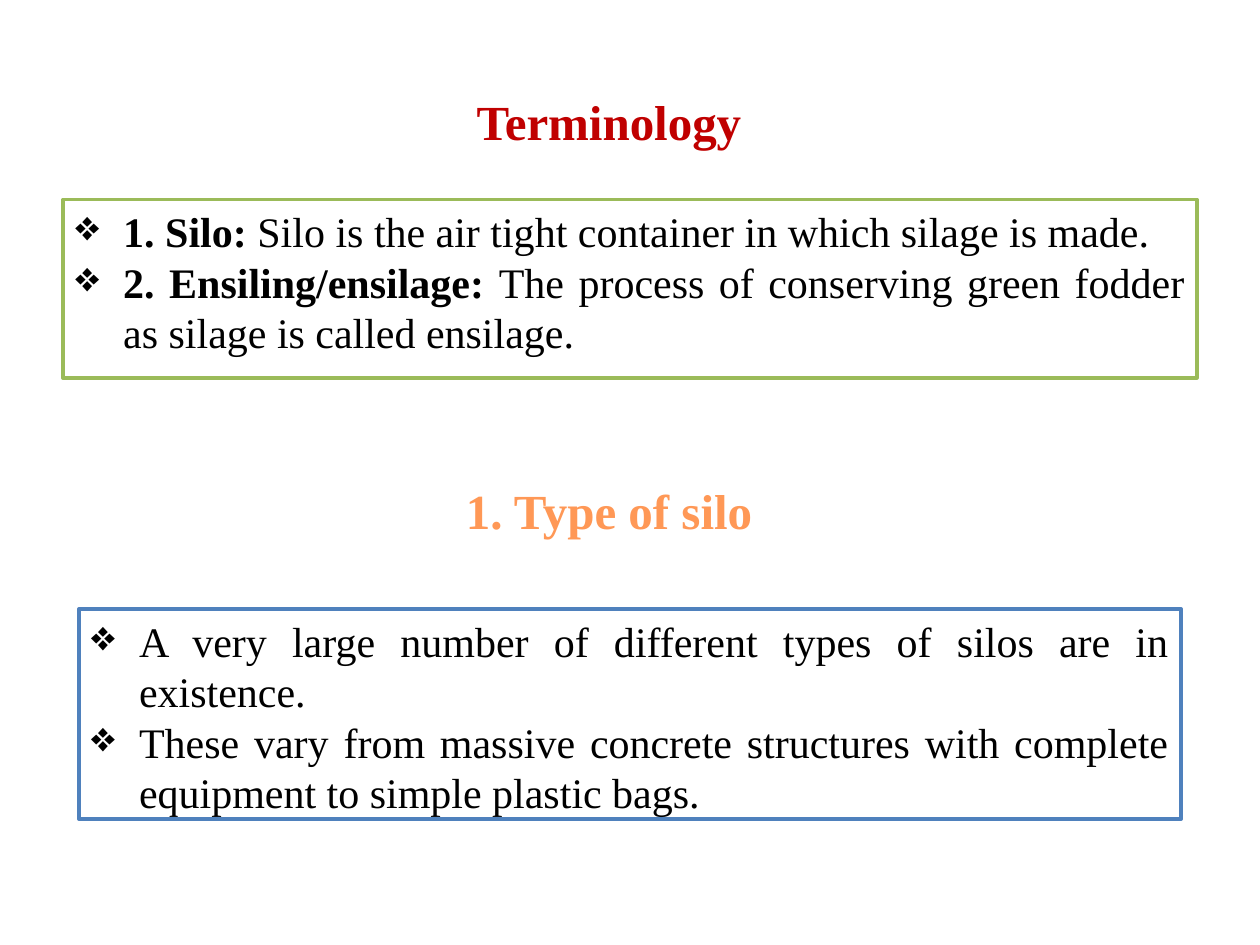
from dataclasses import dataclass

from lxml.etree import SubElement
from pptx import Presentation
from pptx.dml.color import RGBColor
from pptx.enum.shapes import MSO_SHAPE as Shape
from pptx.enum.text import MSO_ANCHOR as Anchor, PP_ALIGN as Align
from pptx.oxml.ns import qn
from pptx.util import Inches, Pt

RED = RGBColor(0xC0, 0x00, 0x00)
ORANGE = RGBColor(0xFF, 0x98, 0x56)
GREEN = RGBColor(0x9B, 0xBB, 0x59)
BLUE = RGBColor(0x4F, 0x81, 0xBD)
BLACK = RGBColor(0, 0, 0)
WHITE = RGBColor(255, 255, 255)
FONT = "Times New Roman"
COLS, ROWS = 120, 90
WIDE, HIGH = Inches(10), Inches(7.5)
HANG = Inches(0.38)


@dataclass
class Area:
    """A place on the grid, in columns and rows."""
    col: float
    row: float
    cols: float
    rows: float

    def box(self) -> tuple:
        return (int(WIDE * self.col / COLS), int(HIGH * self.row / ROWS),
                int(WIDE * self.cols / COLS), int(HIGH * self.rows / ROWS))


@dataclass
class Head:
    area: Area
    text: str
    color: RGBColor
    wrap: bool = True


@dataclass
class Panel:
    """A framed list; each item is a bold term and its plain text."""
    area: Area
    line: RGBColor
    items: list


HEADS = [
    Head(Area(4, 4, 108, 15), "Terminology", RED),
    Head(Area(43, 45.1, 30, 6.9), "1. Type of silo", ORANGE, wrap=False),
]
PANELS = [
    Panel(Area(6, 19, 108, 17), GREEN, [
        ("1. Silo: ", "Silo is the air tight container in which silage is made. "),
        ("2. Ensiling/ensilage: ",
         "The process of conserving green fodder as silage is called ensilage. "),
    ]),
    Panel(Area(7.5, 58, 105, 20), BLUE, [
        ("", "A very large number of different types of silos are in existence. "),
        ("", "These vary from massive concrete structures with complete "
             "equipment to simple plastic bags."),
    ]),
]


def write(para, text: str, size: float = 24, color: RGBColor = BLACK,
          bold: bool = False) -> None:
    run = para.add_run()
    run.text = text
    font = run.font
    font.name, font.size, font.bold = FONT, Pt(size), bold
    font.color.rgb = color


def mark(para) -> None:
    """Give the paragraph a hanging diamond bullet."""
    props = para._p.get_or_add_pPr()
    props.set("marL", str(HANG))
    props.set("indent", str(-HANG))
    SubElement(props, qn("a:buChar")).set("char", "❖")


def draw_head(slide, head: Head) -> None:
    frame = slide.shapes.add_textbox(*head.area.box()).text_frame
    frame.word_wrap = head.wrap
    frame.vertical_anchor = Anchor.MIDDLE
    para = frame.paragraphs[0]
    para.alignment = Align.CENTER
    write(para, head.text, size=28, color=head.color, bold=True)


def draw_panel(slide, panel: Panel) -> None:
    shape = slide.shapes.add_shape(Shape.RECTANGLE, *panel.area.box())
    shape.shadow.inherit = False
    shape.fill.solid()
    shape.fill.fore_color.rgb = WHITE
    shape.line.color.rgb = panel.line
    shape.line.width = Pt(2)
    frame = shape.text_frame
    frame.word_wrap = True
    frame.vertical_anchor = Anchor.TOP
    for i, (term, text) in enumerate(panel.items):
        para = frame.add_paragraph() if i else frame.paragraphs[0]
        para.alignment = Align.JUSTIFY
        para.line_spacing = Pt(28.8)
        mark(para)
        if term:
            write(para, term, bold=True)
        write(para, text)


def main() -> None:
    deck = Presentation()
    deck.slide_width, deck.slide_height = WIDE, HIGH
    slide = deck.slides.add_slide(deck.slide_layouts[6])
    for panel in PANELS:
        draw_panel(slide, panel)
    for head in HEADS:
        draw_head(slide, head)
    deck.save("out.pptx")


if __name__ == "__main__":
    main()
